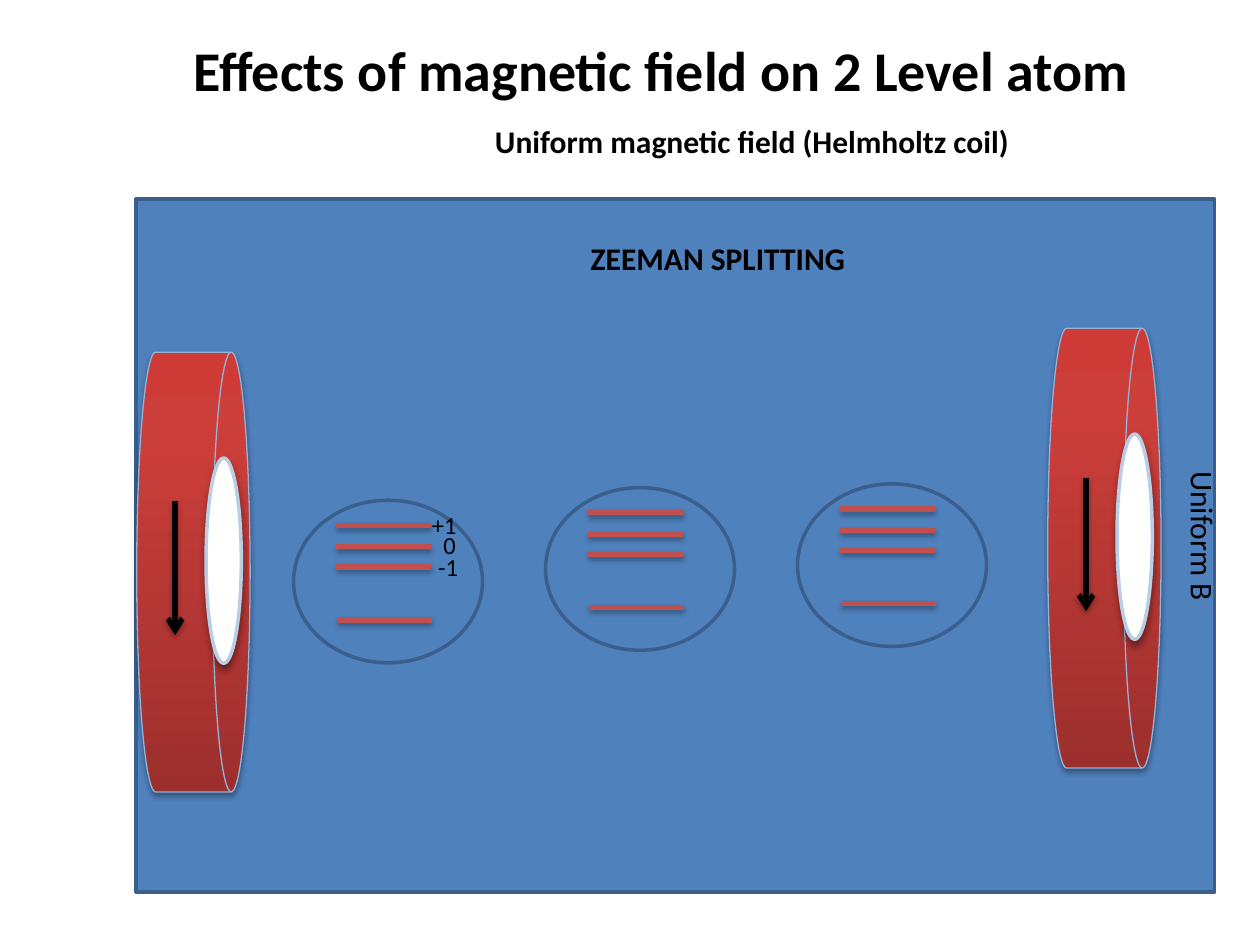
from copy import deepcopy

from lxml import etree
from pptx import Presentation
from pptx import util as u
from pptx.dml.color import RGBColor
from pptx.enum import shapes, text
from pptx.oxml.ns import qn

BLACK = RGBColor(0x00, 0x00, 0x00)
WHITE = RGBColor(0xFF, 0xFF, 0xFF)
FIELD_BLUE = RGBColor(0x4F, 0x81, 0xBD)
FIELD_EDGE = RGBColor(0x3A, 0x5F, 0x8C)
COIL_EDGE = RGBColor(0x95, 0xB3, 0xD7)
BORE_EDGE = RGBColor(0xB9, 0xCD, 0xE5)
LEVEL_RED = RGBColor(0xC0, 0x50, 0x4D)
COIL_STOPS = [(0, RGBColor(0x9C, 0x2F, 0x2D)),
              (0.8, RGBColor(0xCB, 0x3E, 0x3A)),
              (1, RGBColor(0xCE, 0x3B, 0x37))]

SOFT_SHADOW = (35, 3.15, 1.8)
DEEP_SHADOW = (40, 4, 3)

ATOM_LEFT, ATOM_STEP = 2.33, 2
ATOM_TOPS = (3.97, 3.87, 3.84)
LEVELS = [(0.34, 0.2), (0.34, 0.37), (0.34, 0.53), (0.35, 0.95)]
LEVEL_WIDTH = 0.75


def inches(*values):
    return [u.Inches(value) for value in values]


def add_shadow(shape, opacity, blur, distance):
    """Cast a black shadow straight down."""
    properties = shape._element.spPr
    effects = properties.find(qn("a:effectLst"))
    if effects is None:
        effects = etree.SubElement(properties, qn("a:effectLst"))
    shadow = etree.SubElement(
        effects, qn("a:outerShdw"), blurRad=str(u.Pt(blur)),
        dist=str(u.Pt(distance)), dir="5400000", rotWithShape="0")
    colour = etree.SubElement(shadow, qn("a:srgbClr"), val=str(BLACK))
    etree.SubElement(colour, qn("a:alpha"), val=str(opacity * 1000))


def add_figure(page, kind, box, fill, edge, weight, rotation=0, shadow=None):
    figure = page.shapes.add_shape(kind, *inches(*box))
    figure.shadow.inherit = False
    figure.rotation = rotation
    if fill is not None:
        figure.fill.solid()
        figure.fill.fore_color.rgb = fill
    figure.line.color.rgb = edge
    figure.line.width = u.Pt(weight)
    if shadow:
        add_shadow(figure, *shadow)
    return figure


def add_line(page, start, end, colour, arrow=False):
    line = page.shapes.add_connector(
        shapes.MSO_CONNECTOR.STRAIGHT, *inches(*start, *end))
    line.line.color.rgb = colour
    line.line.width = u.Pt(3)
    if arrow:
        etree.SubElement(line.line._get_or_add_ln(), qn("a:tailEnd"), type="arrow")
    add_shadow(line, *SOFT_SHADOW)


def write(frame, words, size, bold=False):
    span = frame.paragraphs[0].add_run()
    span.text = words
    look = {"name": "Calibri", "size": u.Pt(size), "bold": bold}
    for name, value in look.items():
        setattr(span.font, name, value)
    span.font.color.rgb = BLACK


def add_label(page, box, words, size, bold=False, rotation=0):
    label = page.shapes.add_textbox(*inches(*box))
    label.rotation = rotation
    label.text_frame.word_wrap = False
    write(label.text_frame, words, size, bold)


def set_title(page, words):
    title = page.shapes.title
    place = dict(zip(("left", "top", "width", "height"),
                     inches(0.75, -0.08, 9, 1.25)))
    for name, value in place.items():
        setattr(title, name, value)
    title.text_frame.vertical_anchor = text.MSO_ANCHOR.MIDDLE
    title.text_frame.paragraphs[0].alignment = text.PP_ALIGN.CENTER
    write(title.text_frame, words, 32, bold=True)


def shade_coil(coil):
    """Shade the coil from dark at the bottom to bright at the top."""
    coil.fill.gradient()
    coil.fill.gradient_angle = 90
    gradient = coil._element.spPr.find(qn("a:gradFill"))
    gradient.set("rotWithShape", "0")
    stop_list = gradient.find(qn("a:gsLst"))
    stop_list.append(deepcopy(stop_list[-1]))
    for stop, (position, colour) in zip(coil.fill.gradient_stops, COIL_STOPS):
        stop.position = position
        stop.color.rgb = colour


def add_coil(page, left, top):
    """Draw a coil lying on its side, its bore and its current arrow."""
    kinds = shapes.MSO_SHAPE
    coil = add_figure(page, kinds.FLOWCHART_MAGNETIC_DISK, (left, top, 3.49, 0.9),
                      None, COIL_EDGE, 0.75, 90, SOFT_SHADOW)
    shade_coil(coil)
    add_figure(page, kinds.OVAL, (left + 1.17, top + 0.22, 1.63, 0.28),
               WHITE, BORE_EDGE, 2, 90, DEEP_SHADOW)
    arrow_x, arrow_top = left + 1.6, top - 0.11
    add_line(page, (arrow_x, arrow_top), (arrow_x, arrow_top + 1.06),
             BLACK, arrow=True)


def add_atom(page, left, top):
    add_figure(page, shapes.MSO_SHAPE.OVAL, (left, top, 1.5, 1.29),
               FIELD_BLUE, FIELD_EDGE, 2)
    for across, down in LEVELS:
        x, y = left + across, top + down
        add_line(page, (x, y), (x + LEVEL_WIDTH, y), LEVEL_RED)


def main():
    deck = Presentation()
    deck.slide_width, deck.slide_height = inches(10, 7.5)
    page = deck.slides.add_slide(deck.slide_layouts[5])

    set_title(page, "Effects of magnetic field on 2 Level atom")
    add_label(page, (3.83, 0.92, 4.32, 0.4),
              "Uniform magnetic field (Helmholtz coil)", 18, bold=True)

    add_figure(page, shapes.MSO_SHAPE.RECTANGLE, (2.61, 0.05, 5.5, 8.56),
               FIELD_BLUE, FIELD_EDGE, 2, 90)
    add_label(page, (8.52, 3.8, 1.39, 1.07), "Uniform B", 18, rotation=90)
    for left, top in ((7.02, 3.9), (-0.21, 4.09)):
        add_coil(page, left, top)

    for column, top in enumerate(ATOM_TOPS):
        add_atom(page, ATOM_LEFT + column * ATOM_STEP, top)

    add_label(page, (4.59, 1.85, 2.24, 0.4), "ZEEMAN SPLITTING", 18, bold=True)
    for words, left, top, width in (("+1", 3.33, 4, 0.4),
                                    ("0", 3.42, 4.16, 0.3),
                                    ("-1", 3.38, 4.33, 0.36)):
        add_label(page, (left, top, width, 0.34), words, 14)

    deck.save("out.pptx")


if __name__ == "__main__":
    main()
